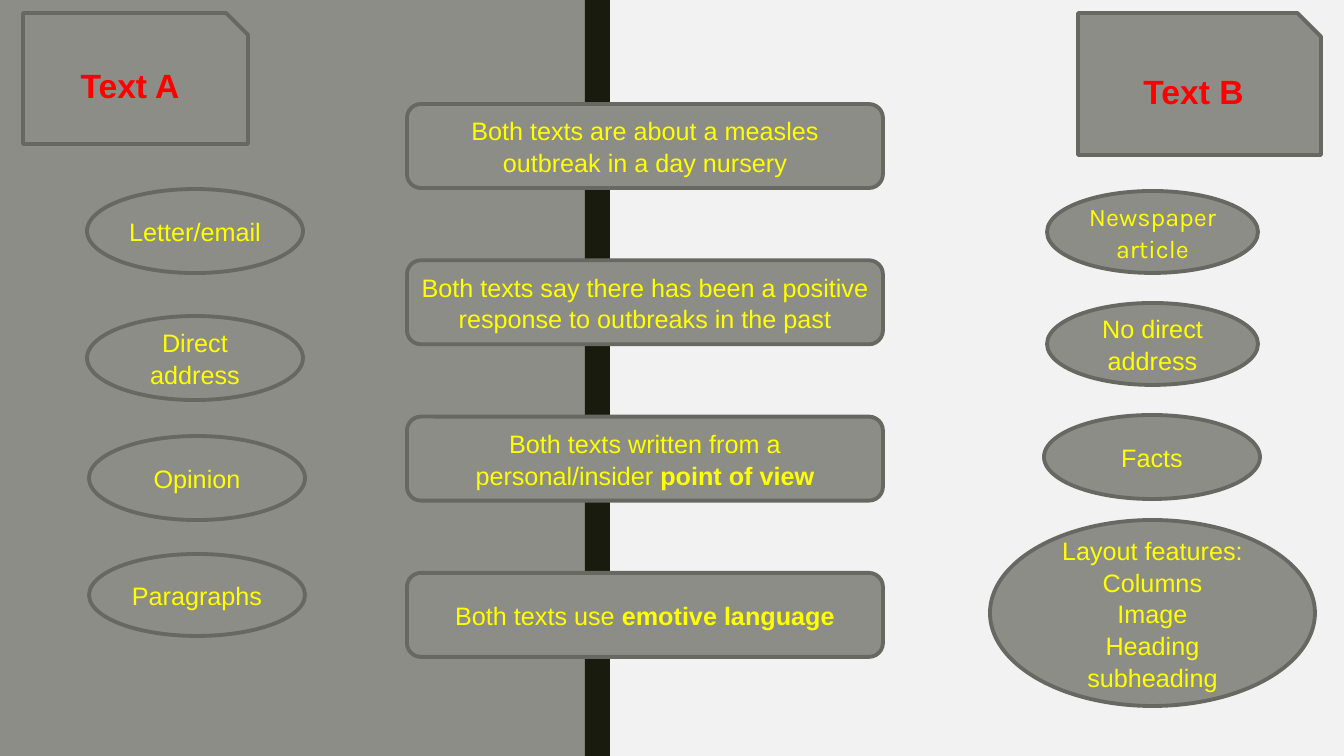
import pptx
import pptx.util
import pptx.dml.color
import pptx.enum.shapes
import pptx.enum.text

RGB = pptx.dml.color.RGBColor
SHAPE = pptx.enum.shapes.MSO_SHAPE

GREY = RGB(0x8C, 0x8D, 0x86)
OUTLINE = RGB(0x68, 0x68, 0x63)
DARK = RGB(0x19, 0x1B, 0x0E)
PALE = RGB(0xF2, 0xF2, 0xF2)
YELLOW = RGB(0xFF, 0xFF, 0x00)
RED = RGB(0xFF, 0x00, 0x00)

# Content: headings and ovals carry left, top, width, height in px
HEADINGS = [
    ("Text A", (23, 13, 225, 131)),
    ("Text B", (1078, 13, 243, 142)),
]
# Each shared point is a plain part followed by a bold part
SHARED_POINTS = [
    ("Both texts are about a measles outbreak in a day nursery", ""),
    ("Both texts say there has been a positive response to outbreaks in the past", ""),
    ("Both texts written from a personal/insider ", "point of view"),
    ("Both texts use ", "emotive language"),
]
OVALS = [
    (["Letter/email"], (87, 189, 216, 84), "Arial"),
    (["Direct address"], (87, 316, 216, 84), "Arial"),
    (["Opinion"], (89, 436, 216, 84), "Arial"),
    (["Paragraphs"], (89, 554, 216, 82), "Arial"),
    (["Newspaper article"], (1047, 191, 211, 82), "Karla"),
    (["No direct address"], (1047, 303, 211, 82), "Arial"),
    (["Facts"], (1044, 415, 216, 84), "Arial"),
    (["Layout features:", "Columns", "Image", "Heading", "subheading"],
     (990, 520, 325, 186), "Arial"),
]

# Geometry
PX = 914400 / 100.8
PAGE_WIDTH, PAGE_HEIGHT = 1344, 756
PANEL_WIDTH, BAR_WIDTH = 585, 25
POINT_LEFT, POINT_TOP, POINT_WIDTH, POINT_HEIGHT = 407, 104, 476, 84
POINT_STEP = 156.3


def emu(pixels):
    return round(pixels * PX)


def add_box(page, kind, place, line=None):
    box = page.shapes.add_shape(kind, *map(emu, place))
    box.shadow.inherit = False
    box.fill.solid()
    box.fill.fore_color.rgb = GREY
    if line is None:
        box.line.fill.background()
    else:
        box.line.color.rgb = line
        box.line.width = pptx.util.Pt(2.75)
    return box


def write(box, lines, size=18, colour=YELLOW, name="Arial"):
    """Each line is a list of (text, bold) spans."""
    frame = box.text_frame
    frame.word_wrap = True
    frame.vertical_anchor = pptx.enum.text.MSO_ANCHOR.MIDDLE
    for index, spans in enumerate(lines):
        para = frame.add_paragraph() if index else frame.paragraphs[0]
        para.alignment = pptx.enum.text.PP_ALIGN.CENTER
        para.line_spacing = 1.05
        for text, bold in spans:
            span = para.add_run()
            span.text = text
            span.font.color.rgb = colour
            formats = {"size": pptx.util.Pt(size), "name": name, "bold": bold}
            for key, value in formats.items():
                setattr(span.font, key, value)


def main():
    deck = pptx.Presentation()
    deck.slide_width, deck.slide_height = emu(PAGE_WIDTH), emu(PAGE_HEIGHT)
    page = deck.slides.add_slide(deck.slide_layouts[6])

    # Background, left panel and dividing bar
    page.background.fill.solid()
    page.background.fill.fore_color.rgb = PALE
    add_box(page, SHAPE.RECTANGLE, (0, 0, PANEL_WIDTH, PAGE_HEIGHT))
    bar = add_box(page, SHAPE.RECTANGLE, (PANEL_WIDTH, 0, BAR_WIDTH, PAGE_HEIGHT))
    bar.fill.fore_color.rgb = DARK

    # Headings
    for title, place in HEADINGS:
        box = add_box(page, SHAPE.SNIP_1_RECTANGLE, place, OUTLINE)
        write(box, [[(title, True)]], size=24, colour=RED)

    # Points shared by both texts
    for row, (plain, bold) in enumerate(SHARED_POINTS):
        top = POINT_TOP + row * POINT_STEP
        place = (POINT_LEFT, top, POINT_WIDTH, POINT_HEIGHT)
        box = add_box(page, SHAPE.ROUNDED_RECTANGLE, place, OUTLINE)
        spans = [(plain, False)] + ([(bold, True)] if bold else [])
        write(box, [spans])

    # Features of each text
    for lines, place, name in OVALS:
        box = add_box(page, SHAPE.OVAL, place, OUTLINE)
        write(box, [[(line, False)] for line in lines], name=name)

    deck.save("out.pptx")


if __name__ == "__main__":
    main()
